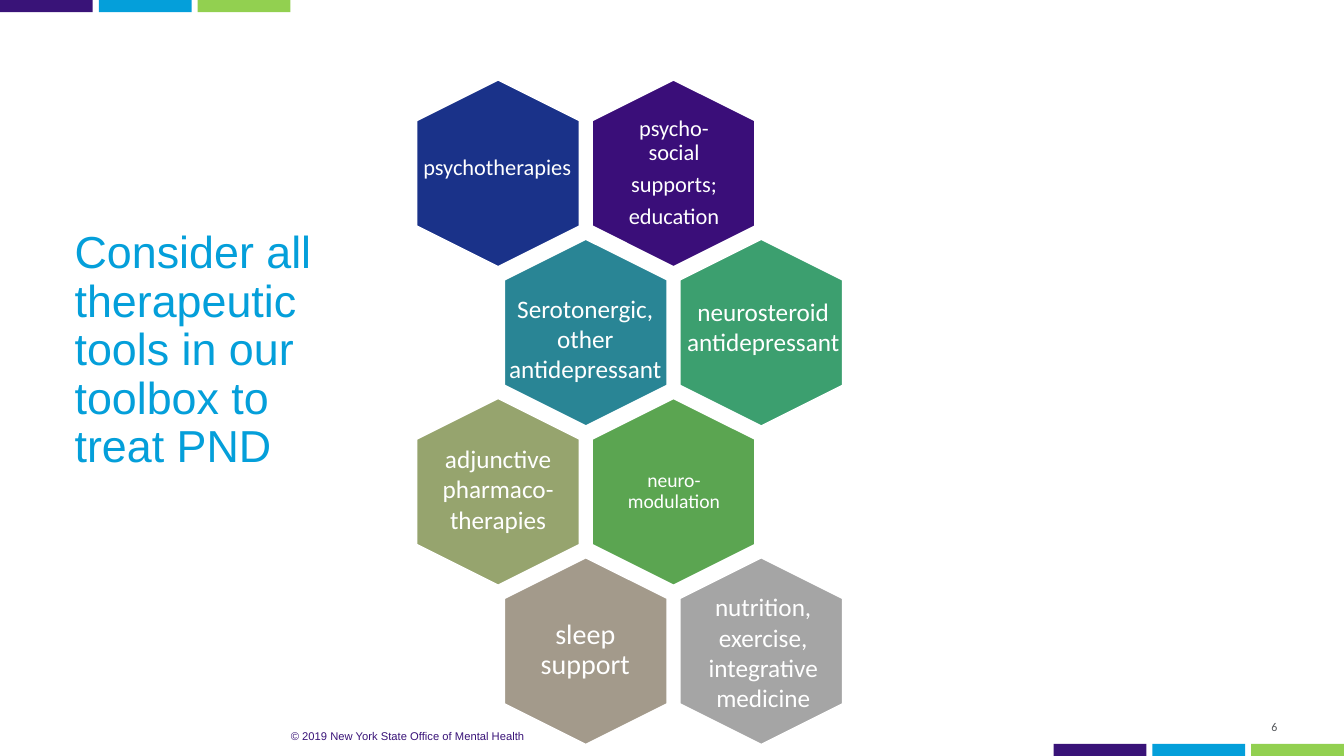
from dataclasses import dataclass

from pptx import Presentation
from pptx.dml.color import RGBColor
from pptx.enum.shapes import MSO_SHAPE as Shape
from pptx.enum.text import MSO_ANCHOR as Anchor, MSO_AUTO_SIZE as AutoSize, PP_ALIGN as Align
from pptx.util import Inches, Pt


@dataclass(frozen=True)
class Theme:
    purple: str = "391378"
    blue: str = "049FDA"
    lime: str = "92D050"
    white: str = "FFFFFF"
    gray: str = "53565A"
    heading_font: str = "Arial"
    body_font: str = "Calibri"
    title_size: float = 32
    large_size: float = 20
    label_size: float = 18
    medium_size: float = 16
    small_size: float = 14
    number_size: float = 8.5
    footer_size: float = 8


class SlideBuilder:
    def __init__(self, page, theme):
        self.page = page
        self.theme = theme

    def shape(self, kind, left, top, width, height, fill):
        shape = self.page.shapes.add_shape(
            kind, Inches(left), Inches(top), Inches(width), Inches(height))
        shape.shadow.inherit = False
        shape.fill.solid()
        shape.fill.fore_color.rgb = RGBColor.from_string(fill)
        shape.line.fill.background()
        return shape

    def hexagon(self, left, top, fill):
        hexagon = self.shape(Shape.HEXAGON, left, top, 1.86, 1.62, fill)
        hexagon.rotation = 90
        hexagon.line.color.rgb = RGBColor.from_string(self.theme.white)
        hexagon.line.width = Pt(1.5)

    def add_lines(self, frame, lines, size, color, font, align, spacing=None, after=None):
        for index, line in enumerate(lines):
            para = frame.paragraphs[0] if index == 0 else frame.add_paragraph()
            para.alignment = align
            para.line_spacing = spacing
            para.space_after = after
            span = para.add_run()
            span.text = line
            span.font.size = Pt(size)
            span.font.name = font
            span.font.color.rgb = RGBColor.from_string(color)

    def title(self, text, left, top, width, height):
        box = self.page.shapes.title
        box.left, box.top = Inches(left), Inches(top)
        box.width, box.height = Inches(width), Inches(height)
        frame = box.text_frame
        frame.word_wrap = True
        frame.auto_size = AutoSize.NONE
        frame.vertical_anchor = Anchor.MIDDLE
        self.add_lines(frame, [text], self.theme.title_size, self.theme.blue,
                       self.theme.heading_font, Align.LEFT, spacing=0.9)

    def text(self, lines, area, size, color=None, font=None, align=Align.CENTER,
             anchor=Anchor.TOP, inset=None, wrap=True, **spacing):
        box = self.page.shapes.add_textbox(*(Inches(value) for value in area))
        frame = box.text_frame
        frame.word_wrap = wrap
        frame.vertical_anchor = anchor
        if inset is not None:
            frame.margin_left = frame.margin_right = Inches(inset)
            frame.margin_top = frame.margin_bottom = Inches(inset)
        self.add_lines(frame, lines, size, color or self.theme.white,
                       font or self.theme.body_font, align, **spacing)

    def inner_label(self, lines, left, top, size, inset):
        self.text(lines, (left, top, 1.11, 1.28), size, anchor=Anchor.MIDDLE,
                  inset=inset, spacing=0.9, after=Pt(round(size * 0.35, 2)))


def main():
    theme = Theme()
    deck = Presentation()
    deck.slide_width, deck.slide_height = Inches(13.33), Inches(7.5)
    page = deck.slides.add_slide(deck.slide_layouts[5])
    builder = SlideBuilder(page, theme)

    # Corner colour bars
    for left, top in ((0, 0), (10.45, 7.38)):
        for index, color in enumerate((theme.purple, theme.blue, theme.lime)):
            builder.shape(Shape.RECTANGLE, left + index * 0.98, top, 0.92, 0.12, color)

    # Title, footer and page number
    builder.title("Consider all therapeutic tools in our toolbox to treat PND",
                  0.64, 2.67, 2.81, 1.63)
    builder.text(["© 2019 New York State Office of Mental Health"], (1.81, 7.1, 4.47, 0.4),
                 theme.footer_size, theme.purple, theme.heading_font, anchor=Anchor.MIDDLE)
    builder.text(["6"], (11.59, 6.97, 1.08, 0.31), theme.number_size, theme.gray,
                 align=Align.RIGHT, anchor=Anchor.BOTTOM, inset=0)

    # Honeycomb: odd rows shift right by half a column
    honeycomb = (("1A3289", "3A0E79"), ("298595", "3C9F6F"),
                 ("96A46E", "5BA551"), ("A39A8B", "A5A5A5"))
    for row, colors in enumerate(honeycomb):
        for column, color in enumerate(colors):
            builder.hexagon(4.01 + 1.74 * column + 0.87 * (row % 2), 0.91 + 1.58 * row, color)

    # Labels fitted inside the hexagons
    builder.inner_label(["psycho-social", "supports;", "education"],
                        6.13, 1.08, theme.medium_size, 0.07)
    builder.inner_label(["neuro-modulation"], 6.13, 4.24, theme.small_size, 0.06)
    builder.inner_label(["sleep support"], 5.25, 5.81, theme.large_size, 0.08)

    # Labels laid over the hexagons
    builder.text(["psychotherapies"], (4.1, 1.47, 1.8, 0.37), theme.medium_size,
                 align=Align.LEFT)
    builder.text(["neurosteroid", "antidepressant"], (6.67, 2.89, 1.8, 0.71), theme.label_size)
    builder.text(["adjunctive pharmaco-therapies"], (4.04, 4.35, 1.8, 1.01), theme.label_size)
    builder.text(["nutrition,", "exercise,", "integrative medicine"],
                 (6.67, 5.82, 1.8, 1.31), theme.label_size)
    builder.text(["Serotonergic,", "other", "antidepressant"], (4.94, 2.86, 1.73, 1.01),
                 theme.label_size, wrap=False)

    deck.save("out.pptx")


if __name__ == "__main__":
    main()
